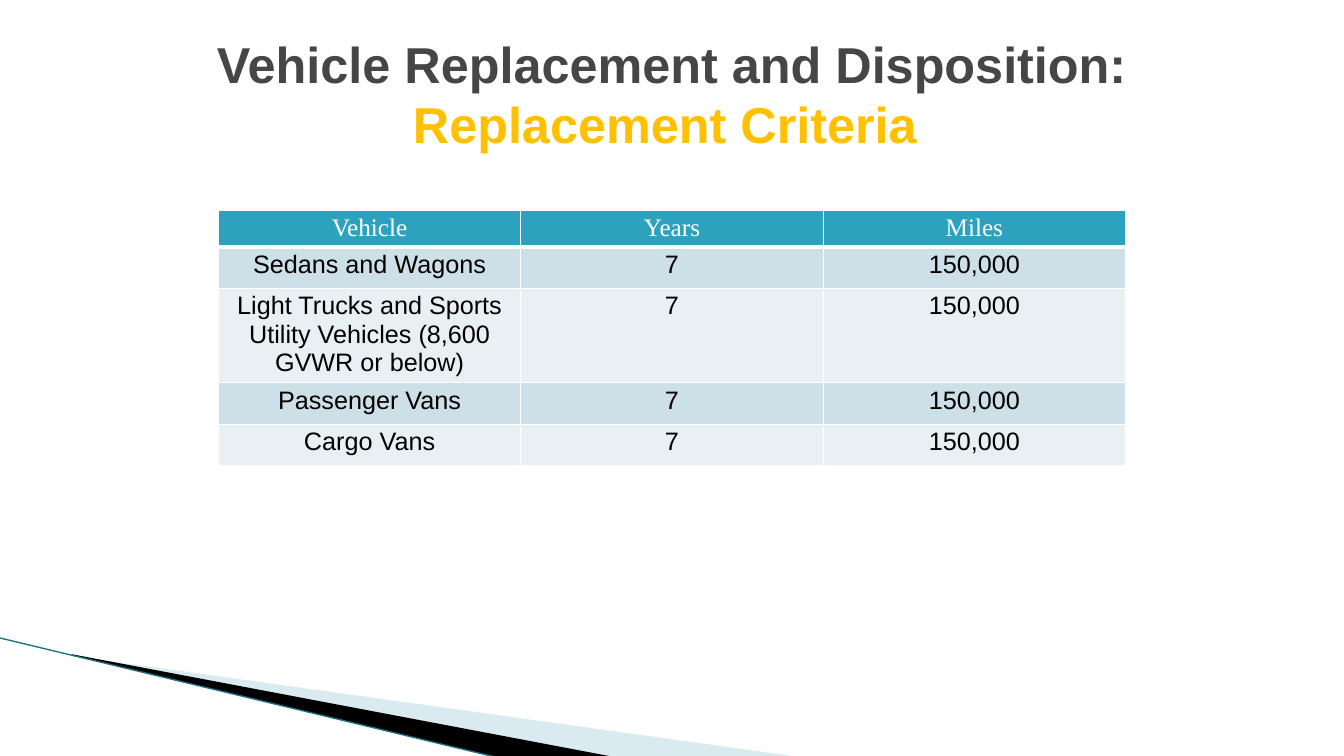
from lxml import etree
from pptx import Presentation
from pptx.dml.color import RGBColor
from pptx.enum import shapes, text
from pptx.oxml import ns
from pptx.util import Pt

COLOURS = {
    "white": "FFFFFF", "black": "000000", "title": "464646", "accent": "FFC000",
    "header": "2DA2BF", "odd row": "CDE0E8", "even row": "E8F0F4",
    "pale wedge": "A0CBDC", "edge": "1B7186",
}
CRITERIA = [
    ("Vehicle", "Years", "Miles"),
    ("Sedans and Wagons", "7", "150,000"),
    ("Light Trucks and Sports Utility Vehicles (8,600 GVWR or below)", "7", "150,000"),
    ("Passenger Vans", "7", "150,000"),
    ("Cargo Vans", "7", "150,000"),
]
ROW_HEIGHTS = [26.5, 29.5, 67.5, 29.5, 29.5]


def rgb(name):
    return RGBColor.from_string(COLOURS[name])


def add_title(slide, left, top, width, height):
    title = slide.shapes.title
    title.left, title.top, title.width, title.height = map(Pt, (left, top, width, height))
    frame = title.text_frame
    frame.word_wrap = True
    frame.auto_size = text.MSO_AUTO_SIZE.NONE
    frame.vertical_anchor = text.MSO_ANCHOR.MIDDLE
    heading = frame.paragraphs[0]
    heading.alignment = text.PP_ALIGN.CENTER
    heading.line_spacing = 1.0
    heading.font.name, heading.font.size, heading.font.bold = "Arial", Pt(36), True
    for words, colour in (("Vehicle Replacement and Disposition: ", "title"),
                          ("Replacement Criteria ", "accent")):
        run = heading.add_run()
        run.text = words
        run.font.color.rgb = rgb(colour)


def set_borders(cell, widths):
    """Draw white borders; they must precede the fill in the cell properties."""
    properties = cell._tc.get_or_add_tcPr()
    for index, (side, width) in enumerate(widths.items()):
        border = etree.Element(ns.qn(f"a:{side}"), w=str(Pt(width)))
        fill = etree.SubElement(border, ns.qn("a:solidFill"))
        etree.SubElement(fill, ns.qn("a:srgbClr"), val=COLOURS["white"])
        properties.insert(index, border)


def add_criteria_table(slide, left, top, width):
    frame = slide.shapes.add_table(len(CRITERIA), len(CRITERIA[0]), Pt(left), Pt(top),
                                   Pt(width), Pt(sum(ROW_HEIGHTS)))
    table = frame.table
    for column in table.columns:
        column.width = Pt(width / len(CRITERIA[0]))
    for r, values in enumerate(CRITERIA):
        table.rows[r].height = Pt(ROW_HEIGHTS[r])
        is_header = r == 0
        fill = "header" if is_header else "odd row" if r % 2 else "even row"
        for c, value in enumerate(values):
            cell = table.cell(r, c)
            cell.margin_top = cell.margin_bottom = Pt(2.6)
            cell.margin_left = cell.margin_right = Pt(5.4)
            cell.fill.solid()
            cell.fill.fore_color.rgb = rgb(fill)
            set_borders(cell, {"lnL": 1, "lnR": 1, "lnT": 3 if r == 1 else 1,
                               "lnB": 3 if is_header else 1})
            entry = cell.text_frame.paragraphs[0]
            entry.text = value
            entry.alignment = text.PP_ALIGN.CENTER
            entry.font.size, entry.font.bold = Pt(18), False
            entry.font.name = "Times New Roman" if is_header else "Arial"
            entry.font.color.rgb = rgb("white" if is_header else "black")


def add_wedge(slide, left, top, points, colour):
    builder = slide.shapes.build_freeform(Pt(left + points[0][0]), Pt(top + points[0][1]))
    builder.add_line_segments([(Pt(left + x), Pt(top + y)) for x, y in points[1:]])
    wedge = builder.convert_to_shape()
    wedge.shadow.inherit = False
    wedge.fill.solid()
    wedge.fill.fore_color.rgb = rgb(colour)
    wedge.line.fill.background()
    return wedge


def add_corner(slide, left, top):
    # Translucent and black wedges
    pale = add_wedge(slide, left, top, [(52.6, 13), (571, 85), (437.8, 85), (52.6, 12.3)],
                     "pale wedge")
    tint = pale._element.spPr.find(".//" + ns.qn("a:srgbClr"))
    etree.SubElement(tint, ns.qn("a:alpha"), val="40000")
    add_wedge(slide, left, top, [(51.1, 11.6), (438.5, 85), (357.1, 85.7), (51.8, 12.3)],
              "black")

    # Thin edge under the wedges
    edge = slide.shapes.add_connector(shapes.MSO_CONNECTOR.STRAIGHT, Pt(left), Pt(top),
                                      Pt(left + 356.5), Pt(top + 85.7))
    edge.line.color.rgb = rgb("edge")
    edge.line.width = Pt(0.95)
    etree.SubElement(edge._element.spPr, ns.qn("a:effectLst"))


def main():
    deck = Presentation()
    deck.slide_width, deck.slide_height = Pt(960), Pt(540)
    slide = deck.slides.add_slide(deck.slide_layouts[5])
    slide.background.fill.solid()
    slide.background.fill.fore_color.rgb = rgb("white")
    add_corner(slide, 0, 455.7)
    add_criteria_table(slide, 156, 150, 648)
    add_title(slide, 48, 21.6, 864, 90)
    deck.save("out.pptx")


if __name__ == "__main__":
    main()
